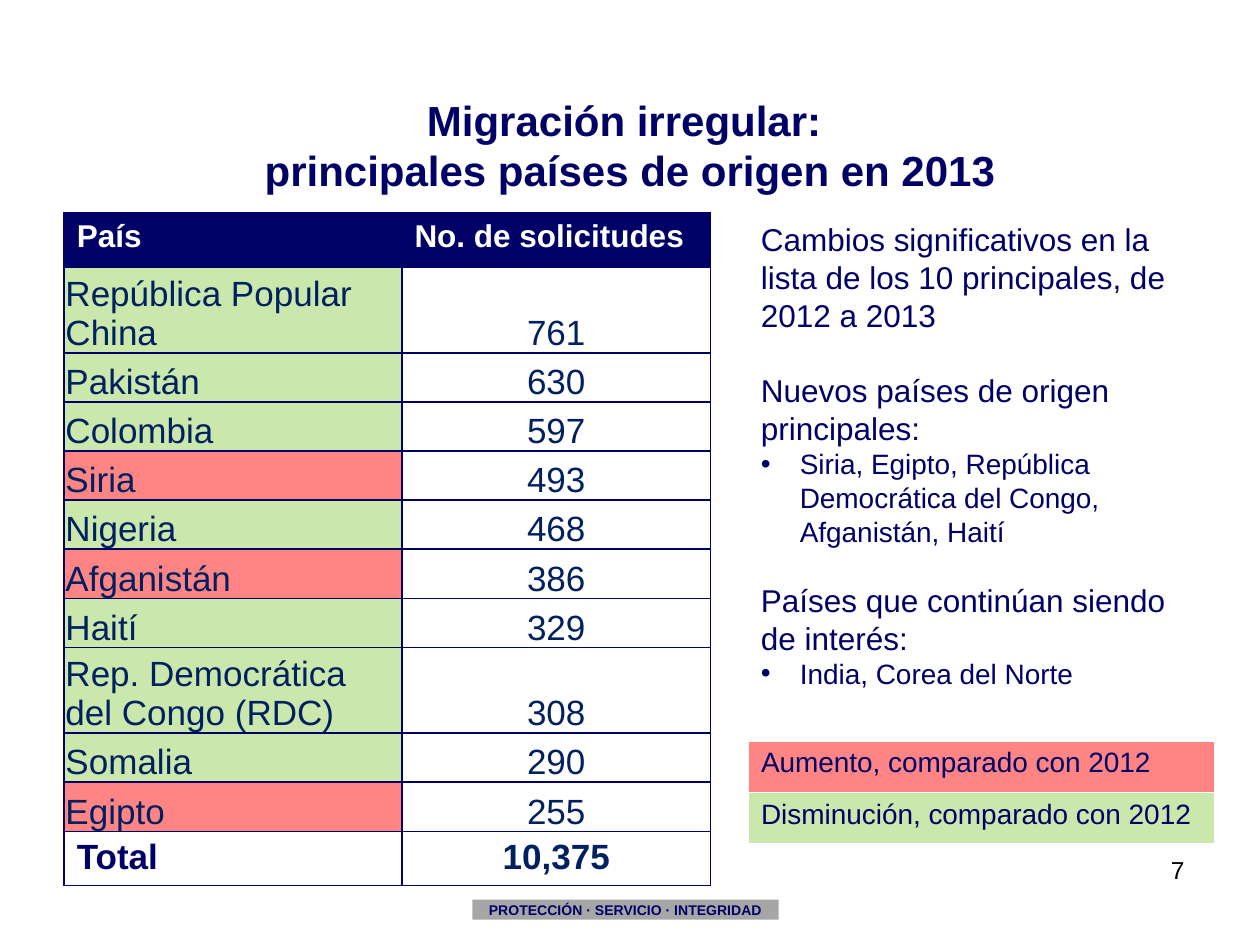
from lxml import etree
from pptx import Presentation
from pptx.dml.color import RGBColor
from pptx.enum.shapes import MSO_SHAPE
from pptx.enum.text import MSO_ANCHOR as Anchor, MSO_AUTO_SIZE as AutoSize, PP_ALIGN as Align
from pptx.oxml.ns import qn
from pptx.util import Inches, Pt

NAVY = RGBColor(0x00, 0x00, 0x66)
DARK_BLUE = RGBColor(0x00, 0x20, 0x60)
WHITE = RGBColor(0xFF, 0xFF, 0xFF)
BLACK = RGBColor(0x00, 0x00, 0x00)
GREY = RGBColor(0xA6, 0xA6, 0xA6)
GREEN = RGBColor(0x92, 0xD0, 0x50)
RED = RGBColor(0xFF, 0x00, 0x00)

COUNTRIES = [
    ("República Popular China", "761", GREEN),
    ("Pakistán", "630", GREEN),
    ("Colombia", "597", GREEN),
    ("Siria", "493", RED),
    ("Nigeria", "468", GREEN),
    ("Afganistán", "386", RED),
    ("Haití", "329", GREEN),
    ("Rep. Democrática del Congo (RDC)", "308", GREEN),
    ("Somalia", "290", GREEN),
    ("Egipto", "255", RED),
]
TALL_ROWS = (0, 7)
LEGEND = [("Aumento, comparado con 2012", RED), ("Disminución, comparado con 2012", GREEN)]
NOTES = [
    ("Cambios significativos en la lista de los 10 principales, de 2012 a 2013", False, 0),
    ("Nuevos países de origen principales:", False, 21.5),
    ("Siria, Egipto, República Democrática del Congo, Afganistán, Haití", True, 0),
    ("Países que continúan siendo de interés:", False, 19),
    ("India, Corea del Norte", True, 0),
]


class SlideBuilder:
    font_name = "Arial"

    def __init__(self, presentation):
        self.slide = presentation.slides.add_slide(presentation.slide_layouts[5])

    def style(self, paragraph, size, color, bold=False, align=Align.LEFT):
        paragraph.alignment = align
        font = paragraph.font
        font.name, font.size, font.bold = self.font_name, Pt(size), bold
        font.color.rgb = color

    def title(self, text, left, top, width, height):
        shape = self.slide.shapes.title
        shape.left, shape.top = Inches(left), Inches(top)
        shape.width, shape.height = Inches(width), Inches(height)
        frame = shape.text_frame
        frame.text = text
        frame.auto_size = AutoSize.NONE
        frame.vertical_anchor = Anchor.MIDDLE
        self.style(frame.paragraphs[0], 24, NAVY, True, Align.CENTER)

    def text_box(self, left, top, width, height):
        box = self.slide.shapes.add_textbox(Inches(left), Inches(top), Inches(width), Inches(height))
        box.text_frame.word_wrap = True
        return box.text_frame

    def label(self, text, left, top, width, height, size, color, align):
        paragraph = self.text_box(left, top, width, height).paragraphs[0]
        paragraph.text = text
        self.style(paragraph, size, color, align=align)

    def notes(self, items, left, top, width, height):
        frame = self.text_box(left, top, width, height)
        for index, (text, bulleted, gap) in enumerate(items):
            paragraph = frame.add_paragraph() if index else frame.paragraphs[0]
            paragraph.text = text
            if gap:
                paragraph.space_before = Pt(gap)
            if bulleted:
                self.bullet(paragraph, 0.31)
            self.style(paragraph, 16 if bulleted else 18, NAVY)

    def bullet(self, paragraph, indent):
        properties = paragraph._p.get_or_add_pPr()
        properties.set("marL", str(Inches(indent)))
        properties.set("indent", str(-Inches(indent)))
        etree.SubElement(properties, qn("a:buFont")).set("typeface", self.font_name)
        etree.SubElement(properties, qn("a:buChar")).set("char", "•")

    def banner(self, text, left, top, width, height):
        shape = self.slide.shapes.add_shape(
            MSO_SHAPE.RECTANGLE, Inches(left), Inches(top), Inches(width), Inches(height))
        shape.shadow.inherit = False
        shape.fill.solid()
        shape.fill.fore_color.rgb = GREY
        shape.line.fill.background()
        frame = shape.text_frame
        frame.text = text
        frame.vertical_anchor = Anchor.MIDDLE
        self.style(frame.paragraphs[0], 8, NAVY, True, Align.CENTER)

    def table(self, left, top, columns, rows):
        frame = self.slide.shapes.add_table(
            len(rows), len(columns), Inches(left), Inches(top),
            Inches(sum(columns)), Inches(sum(rows)))
        table = frame.table
        table.first_row = table.horz_banding = False
        for column, width in zip(table.columns, columns):
            column.width = Inches(width)
        for row, height in zip(table.rows, rows):
            row.height = Inches(height)
        return table

    def cell(self, cell, text, size, color, border, fill=None, alpha=None,
             bold=False, align=Align.LEFT, tight=False):
        cell.text = text
        if tight:
            cell.margin_left = cell.margin_right = cell.margin_top = Inches(0.01)
            cell.margin_bottom = 0
            cell.vertical_anchor = Anchor.BOTTOM
        self.style(cell.text_frame.paragraphs[0], size, color, bold, align)
        properties = cell._tc.get_or_add_tcPr()
        for side in ("lnL", "lnR", "lnT", "lnB"):
            line = etree.SubElement(properties, qn(f"a:{side}"), w=str(Pt(1)))
            solid = etree.SubElement(line, qn("a:solidFill"))
            etree.SubElement(solid, qn("a:srgbClr"), val=str(border))
        if fill is None:
            cell.fill.background()
            return
        cell.fill.solid()
        cell.fill.fore_color.rgb = fill
        if alpha:
            shade = properties.find(qn("a:solidFill")).find(qn("a:srgbClr"))
            etree.SubElement(shade, qn("a:alpha"), val=str(alpha * 1000))

    def country_table(self, left, top):
        heights = [0.68 if index in TALL_ROWS else 0.39 for index in range(len(COUNTRIES))]
        table = self.table(left, top, [2.68, 2.45], [0.43, *heights, 0.43])
        for column, heading in enumerate(("País", "No. de solicitudes")):
            self.cell(table.cell(0, column), heading, 18, WHITE, NAVY, NAVY, bold=True)
        for row, (country, requests, fill) in enumerate(COUNTRIES, 1):
            self.cell(table.cell(row, 0), country, 20, DARK_BLUE, NAVY, fill, 48, tight=True)
            self.cell(table.cell(row, 1), requests, 20, DARK_BLUE, NAVY,
                      align=Align.CENTER, tight=True)
        last = len(COUNTRIES) + 1
        self.cell(table.cell(last, 0), "Total", 20, NAVY, NAVY, bold=True)
        self.cell(table.cell(last, 1), "10,375", 20, DARK_BLUE, NAVY,
                  bold=True, align=Align.CENTER)

    def legend(self, left, top):
        table = self.table(left, top, [3.7], [0.41] * len(LEGEND))
        for row, (text, fill) in enumerate(LEGEND):
            self.cell(table.cell(row, 0), text, 16, NAVY, WHITE, fill, 48)


def main():
    presentation = Presentation()
    presentation.slide_width, presentation.slide_height = Inches(10), Inches(7.5)
    builder = SlideBuilder(presentation)
    builder.title("Migración irregular: \vprincipales países de origen en 2013", 0.5, 0.83, 9, 0.64)
    builder.country_table(0.51, 1.69)
    builder.legend(5.94, 5.88)
    builder.label("7", 7.17, 6.74, 2.33, 0.52, 14, BLACK, Align.RIGHT)
    builder.notes(NOTES, 5.94, 1.7, 3.54, 4.68)
    builder.banner("PROTECCIÓN · SERVICIO · INTEGRIDAD", 3.75, 7.14, 2.43, 0.16)
    presentation.save("out.pptx")


if __name__ == "__main__":
    main()
